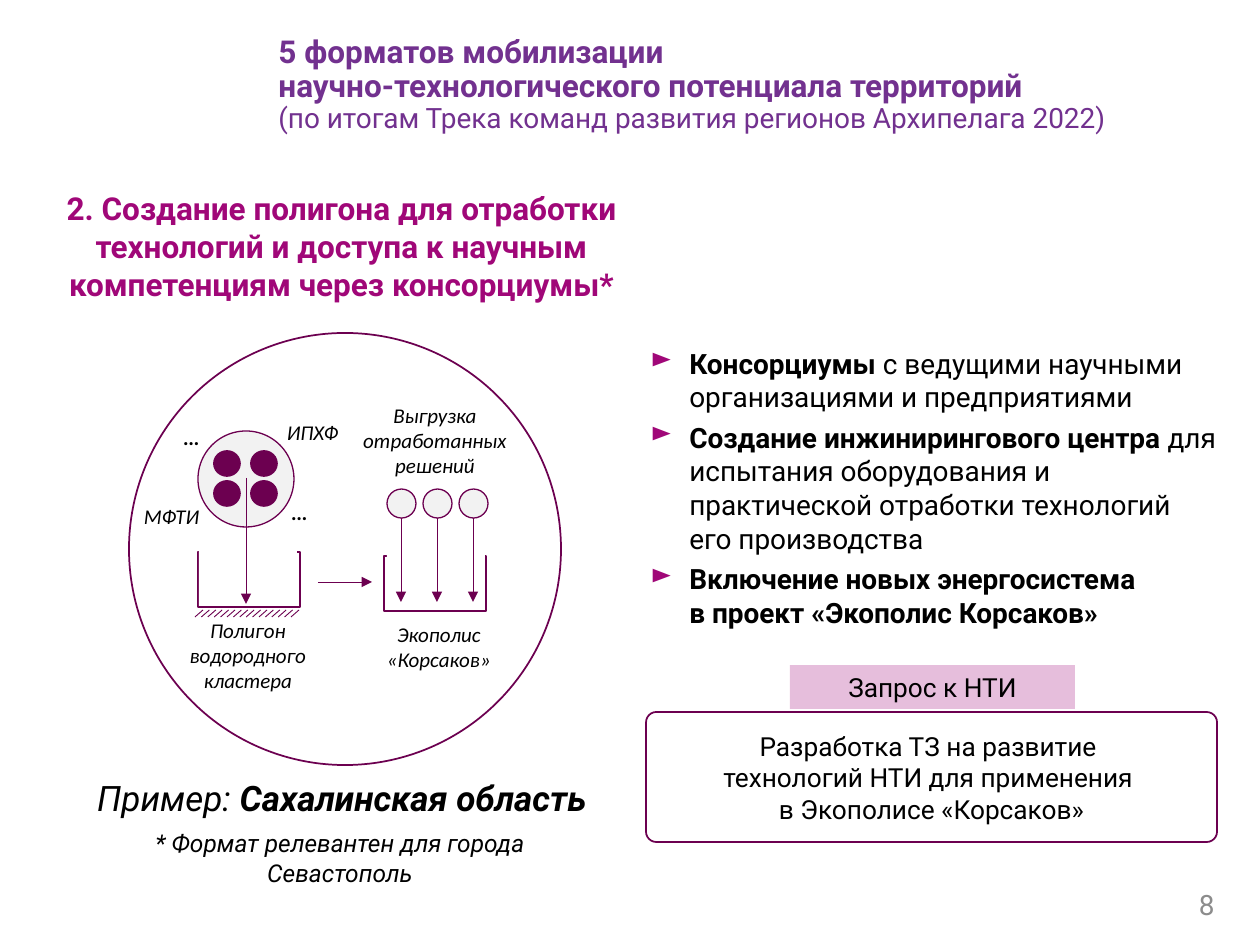
"""Build the slide on a hydrogen test site and access to research consortia."""
from lxml import etree
from pptx import Presentation
from pptx.dml.color import RGBColor
from pptx.enum.shapes import MSO_CONNECTOR, MSO_SHAPE
from pptx.enum.text import MSO_ANCHOR, PP_ALIGN
from pptx.oxml.ns import qn
from pptx.util import Pt

PX = 914400 / 126
OVAL, RECT, ROUND = MSO_SHAPE.OVAL, MSO_SHAPE.RECTANGLE, MSO_SHAPE.ROUNDED_RECTANGLE
STRAIGHT = MSO_CONNECTOR.STRAIGHT
LEFT, CENTER, RIGHT = PP_ALIGN.LEFT, PP_ALIGN.CENTER, PP_ALIGN.RIGHT
TOP, MIDDLE = MSO_ANCHOR.TOP, MSO_ANCHOR.MIDDLE
C = {"plum": "6C0050", "magenta": "A00778", "violet": "72318F", "pale": "F2F2F2",
     "white": "FFFFFF", "black": "000000", "gray": "8C8C8C"}


def add_shape(shapes, kind, box, fill, line):
    sp = shapes.add_shape(kind, *[round(v * PX) for v in box])
    sp.shadow.inherit = False
    if fill:
        sp.fill.solid()
        sp.fill.fore_color.rgb = RGBColor.from_string(C[fill])
    else:
        sp.fill.background()
    if line:
        sp.line.color.rgb = RGBColor.from_string(C["plum"])
        sp.line.width = Pt(line)
    else:
        sp.line.fill.background()
    return sp


def write(tf, paragraphs, size, color="black", align=CENTER, anchor=TOP,
          name="Roboto", italic=False):
    tf.word_wrap = True
    tf.vertical_anchor = anchor
    for i, runs in enumerate(paragraphs):
        p = tf.add_paragraph() if i else tf.paragraphs[0]
        p.alignment = align
        for text, bold, *own_size in runs:
            for j, part in enumerate(text.split("\n")):
                if j:
                    p.add_line_break()
                if not part:
                    continue
                r = p.add_run()
                r.text = part
                fmt = {"name": name, "size": Pt(own_size[0] if own_size else size),
                       "bold": bold, "italic": italic}
                for key, value in fmt.items():
                    setattr(r.font, key, value)
                r.font.color.rgb = RGBColor.from_string(C[color])


prs = Presentation()
prs.slide_width, prs.slide_height = round(1260 * PX), round(945 * PX)
s = prs.slides.add_slide(prs.slide_layouts[6])
diagram = s.shapes.add_group_shape().shapes

figures = [
    (OVAL, (198, 431, 96, 96), "pale", 0.75),
    (OVAL, (129, 333, 432, 432), None, 1),
    (RECT, (198, 552, 102, 55), "white", 1),
    (RECT, (199, 551, 98, 55), "white", None),
    (RECT, (384, 556, 102, 55), "white", 1),
    (RECT, (387, 553, 98, 55), "white", None),
]
figures += [(OVAL, (x, y, 26, 25), "plum", 1) for x in (214, 251) for y in (451, 481)]
figures += [(OVAL, (387 + 36 * i, 489, 29, 29), "pale", 0.75) for i in range(3)]
for figure in figures:
    add_shape(diagram, *figure)

arrows = [(246, 478, 246, 604), (318, 582, 372, 582)]
arrows += [(401 + 36 * i, 518, 401 + 36 * i, 602) for i in range(3)]
hatching = [(203 + 6.4 * i, 610, 195 + 6.4 * i, 617) for i in range(16)]
for ends in arrows + hatching:
    cn = diagram.add_connector(STRAIGHT, *[round(v * PX) for v in ends])
    cn.line.color.rgb = RGBColor.from_string(C["plum"])
    cn.line.width = Pt(0.5)
    if ends in arrows:
        etree.SubElement(cn.line._get_or_add_ln(), qn("a:tailEnd"), type="triangle")
    etree.SubElement(cn._element.spPr, qn("a:effectLst"))

label = {"size": 12, "name": "Calibri", "italic": True}
title = {"size": 18, "color": "violet", "align": LEFT, "anchor": MIDDLE}
texts = [
    (diagram, (152, 611, 192, 90), [[("Полигон водородного кластера", False)]], label),
    (diagram, (106, 497, 131, 39), [[("МФТИ", False)]], label),
    (diagram, (247, 413, 131, 39), [[("ИПХФ", False)]], label),
    (diagram, (343, 615, 192, 64), [[("Экополис «Корсаков»", False)]], label),
    (diagram, (339, 396, 192, 90), [[("Выгрузка отработанных решений", False)]], label),
    (diagram, (277, 493, 45, 39), [[("…", True)]], label),
    (diagram, (169, 418, 45, 39), [[("…", True)]], label),
    (s.shapes, (73, 770, 538, 55),
     [[("Пример: ", False), ("Сахалинская область", True)]], {"size": 20, "italic": True}),
    (s.shapes, (71, 822, 538, 43),
     [[("* Формат релевантен для города Севастополь", False)]],
     {"size": 14, "italic": True}),
    (s.shapes, (944, 879, 283, 50), [[("8", False)]],
     {"size": 16, "color": "gray", "align": RIGHT, "anchor": MIDDLE}),
    (s.shapes, (266, 20, 961, 130),
     [[("5 форматов мобилизации \nнаучно-технологического потенциала территорий\n", True),
       ("(по итогам Трека команд развития регионов Архипелага 2022)", False, 16)]], title),
    (s.shapes, (48, 183, 587, 127),
     [[("2. Создание полигона для отработки технологий и доступа к научным "
        "компетенциям через консорциумы*", True)]], {"size": 18, "color": "magenta"}),
    (s.shapes, (638, 340, 591, 299), [
        [("Консорциумы ", True),
         ("с ведущими научными организациями и предприятиями", False)],
        [("Создание инжинирингового центра ", True),
         ("для испытания оборудования и практической отработки технологий "
          "его производства", False)],
        [("Включение новых энергосистема \nв проект «Экополис Корсаков»", True)],
    ], {"size": 16, "align": LEFT}),
]
for shapes, box, paragraphs, style in texts:
    tf = shapes.add_textbox(*[round(v * PX) for v in box]).text_frame
    write(tf, paragraphs, **style)
    if style is title:
        tf.paragraphs[0].line_spacing = 0.9

for i, p in enumerate(tf.paragraphs):
    pPr = p._p.get_or_add_pPr()
    indent = round(39 * PX)
    pPr.set("marL", str(indent))
    pPr.set("indent", str(-indent))
    color = etree.SubElement(pPr, qn("a:buClr"))
    etree.SubElement(color, qn("a:srgbClr"), val=C["magenta"])
    etree.SubElement(pPr, qn("a:buChar"), char="►")
    tabs = etree.SubElement(pPr, qn("a:tabLst"))
    etree.SubElement(tabs, qn("a:tab"), pos=str(round(74 * PX)), algn="l")
    p.space_before = Pt(2 if i else 0)
    p.space_after = Pt(2)

sp = add_shape(s.shapes, RECT, (790, 665, 285, 44), "magenta", None)
rgb = sp.fill._xPr.find(qn("a:solidFill")).find(qn("a:srgbClr"))
etree.SubElement(rgb, qn("a:alpha"), val="26000")
write(sp.text_frame, [[("Запрос к НТИ", False)]], 15)

sp = add_shape(s.shapes, ROUND, (646, 712, 571, 130), None, 1)
sp.adjustments[0] = 0.08
sp.text_frame.margin_left = sp.text_frame.margin_right = 0
write(sp.text_frame, [[("Разработка ТЗ на развитие \nтехнологий НТИ для применения \n"
                        "в Экополисе «Корсаков»", False)]], 15, anchor=MIDDLE)

prs.save("out.pptx")
